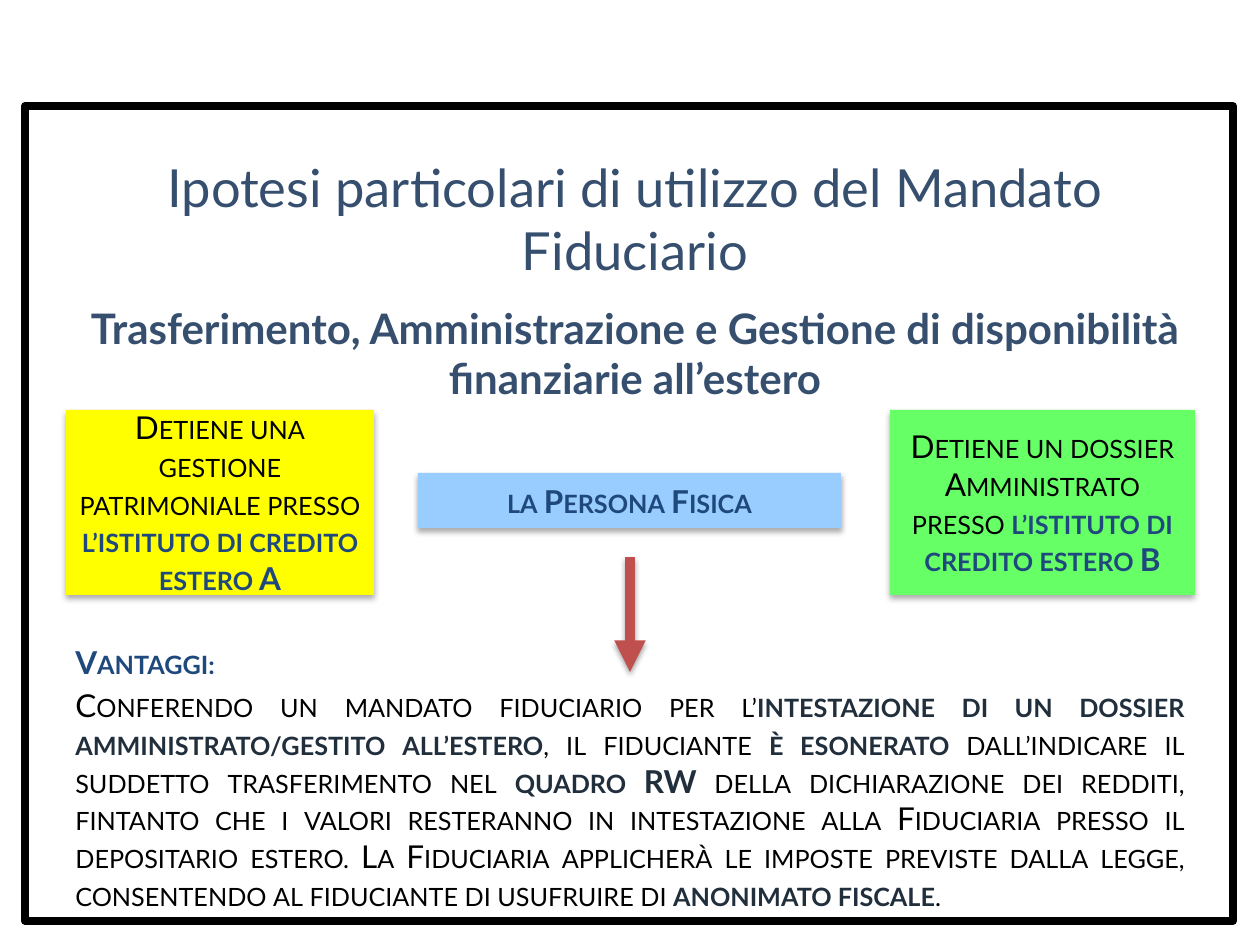
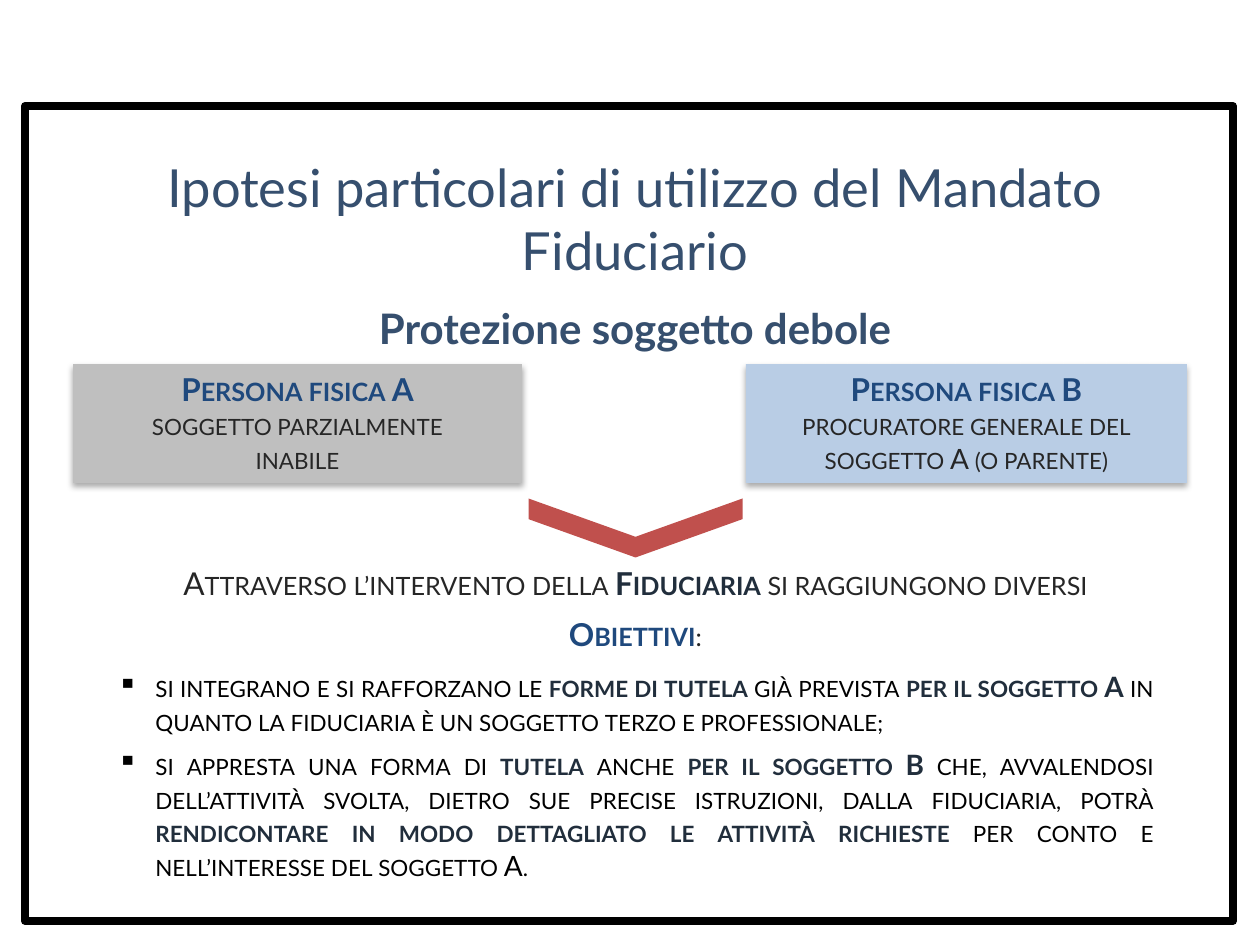
from dataclasses import dataclass

import pptx
import pptx.util
from lxml import etree
from pptx.dml.color import RGBColor
from pptx.enum.shapes import MSO_CONNECTOR, MSO_SHAPE
from pptx.enum.text import MSO_ANCHOR, MSO_AUTO_SIZE, PP_ALIGN
from pptx.oxml.ns import qn

PX = pptx.util.Inches(1) / 126
FONT = "Lato"

BLACK = RGBColor(0x00, 0x00, 0x00)
CHARCOAL = RGBColor(0x26, 0x26, 0x26)
SLATE = RGBColor(0x36, 0x4F, 0x6E)
NAVY = RGBColor(0x1F, 0x49, 0x7D)
INK = RGBColor(0x21, 0x2E, 0x3C)
RED = RGBColor(0xC0, 0x50, 0x4D)
YELLOW = RGBColor(0xFF, 0xFF, 0x00)
GREEN = RGBColor(0x66, 0xFF, 0x66)
SKY = RGBColor(0x99, 0xCC, 0xFF)
GREY = RGBColor(0xBF, 0xBF, 0xBF)
PALE_BLUE = RGBColor(0xB9, 0xCD, 0xE5)

# Run styles: colour, bold
PLAIN = (BLACK, False)
SOFT = (CHARCOAL, False)
STRONG = (INK, True)
ACCENT = (NAVY, True)

CENTER, JUSTIFY, LEFT = PP_ALIGN.CENTER, PP_ALIGN.JUSTIFY, PP_ALIGN.LEFT


@dataclass
class Line:
    """One paragraph: its runs are (text, style) pairs."""
    runs: list
    size: int = 18
    align: PP_ALIGN = CENTER
    after: float = 0
    spacing: float = 1
    bullet: bool = False
    small_caps: bool = True


FRAME = (25, 106, 1208, 815)
TITLE_AREA = (63, 149, 1144, 156)
TITLE = "Ipotesi particolari di utilizzo del Mandato Fiduciario"
BULLET_INDENT = 38

TRANSFER = {
    "subtitle": "Trasferimento, Amministrazione e Gestione di disponibilità finanziarie all’estero",
    "boxes": [
        ((890, 410, 305, 185), GREEN, MSO_ANCHOR.MIDDLE, [
            Line([("Detiene un dossier", PLAIN)]),
            Line([("Amministrato presso ", PLAIN),
                  ("l’istituto di credito estero B", ACCENT)]),
        ]),
        ((418, 473, 423, 55), SKY, MSO_ANCHOR.MIDDLE, [
            Line([("la Persona Fisica", ACCENT)]),
        ]),
        ((66, 410, 308, 185), YELLOW, MSO_ANCHOR.MIDDLE, [
            Line([("Detiene una gestione patrimoniale presso ", PLAIN),
                  ("l’istituto di credito estero A", ACCENT)]),
        ]),
    ],
    "texts": [
        ((63, 633, 1134, 238), [
            Line([("Vantaggi:", ACCENT)], align=LEFT, after=3, spacing=1.1),
            Line([
                ("Conferendo un mandato fiduciario per l’", PLAIN),
                ("intestazione di un dossier amministrato/gestito all’estero", STRONG),
                (", il fiduciante ", PLAIN),
                ("è esonerato ", STRONG),
                ("dall’indicare il suddetto trasferimento nel ", PLAIN),
                ("quadro RW ", STRONG),
                ("della dichiarazione dei redditi, fintanto che i valori resteranno in "
                 "intestazione alla Fiduciaria presso il depositario estero. La Fiduciaria "
                 "applicherà le imposte previste dalla legge, consentendo al fiduciante di "
                 "usufruire di ", PLAIN),
                ("anonimato fiscale", STRONG),
                (".", PLAIN),
            ], align=JUSTIFY),
        ]),
    ],
}

PROTECTION = {
    "subtitle": "Protezione soggetto debole",
    "boxes": [
        ((73, 364, 449, 119), GREY, MSO_ANCHOR.TOP, [
            Line([("Persona fisica A", ACCENT)]),
            Line([("soggetto parzialmente", SOFT)], size=16),
            Line([("inabile", SOFT)], size=16),
        ]),
        ((746, 364, 441, 119), PALE_BLUE, MSO_ANCHOR.TOP, [
            Line([("Persona fisica B", ACCENT)]),
            Line([("procuratore generale del soggetto A (o parente)", SOFT)], size=16),
        ]),
    ],
    "texts": [
        ((105, 609, 1061, 248), [
            Line([("Obiettivi", ACCENT), (":", SOFT)], after=9.6),
            Line([
                ("si integrano e si rafforzano le ", PLAIN),
                ("forme di tutela ", STRONG),
                ("già prevista ", PLAIN),
                ("per il soggetto A", STRONG),
                (" in quanto la fiduciaria è un soggetto terzo e professionale;", PLAIN),
            ], size=16, align=JUSTIFY, after=6, bullet=True),
            Line([
                ("si appresta una forma di ", PLAIN),
                ("tutela", STRONG),
                (" anche ", PLAIN),
                ("per il soggetto B ", STRONG),
                ("che, avvalendosi dell’attività svolta, dietro sue precise istruzioni, "
                 "dalla fiduciaria, potrà ", PLAIN),
                ("rendicontare in modo dettagliato le attività richieste ", STRONG),
                ("per conto e nell’interesse del soggetto A.", PLAIN),
            ], size=16, align=JUSTIFY, after=6, bullet=True),
        ]),
        ((147, 558, 977, 50), [
            Line([("Attraverso l’intervento della ", SOFT), ("Fiduciaria", STRONG),
                  (" si raggiungono diversi", SOFT)]),
        ]),
    ],
}

ARROW = (630, 557, 630, 672)
CHEVRON = (606, 421, 59, 214)


def emu(lengths):
    return [round(length * PX) for length in lengths]


def write(text_frame, lines, anchor=MSO_ANCHOR.TOP):
    text_frame.word_wrap = True
    text_frame.auto_size = MSO_AUTO_SIZE.NONE
    text_frame.vertical_anchor = anchor
    for index, line in enumerate(lines):
        paragraph = text_frame.add_paragraph() if index else text_frame.paragraphs[0]
        paragraph.alignment = line.align
        paragraph.line_spacing = line.spacing
        paragraph.space_before = pptx.util.Pt(0)
        paragraph.space_after = pptx.util.Pt(line.after)
        if line.bullet:
            properties = paragraph._p.get_or_add_pPr()
            indent = round(BULLET_INDENT * PX)
            properties.set("marL", str(indent))
            properties.set("indent", str(-indent))
            etree.SubElement(properties, qn("a:buChar"), char="▪")
        paragraph.font.name = FONT
        paragraph.font.size = pptx.util.Pt(line.size)
        for text, (colour, bold) in line.runs:
            run = paragraph.add_run()
            run.text = text
            run.font.color.rgb = colour
            run.font.bold = bold
            if line.small_caps:
                run._r.get_or_add_rPr().set("cap", "small")


def add_shadow(shape, blur, distance, opacity):
    """Give the shape a soft black shadow straight below it."""
    properties = shape._element.spPr
    effects = properties.find(qn("a:effectLst"))
    if effects is None:
        effects = etree.SubElement(properties, qn("a:effectLst"))
    shadow = etree.SubElement(
        effects, qn("a:outerShdw"), blurRad=str(pptx.util.Pt(blur)),
        dist=str(pptx.util.Pt(distance)), dir="5400000", rotWithShape="0")
    colour = etree.SubElement(shadow, qn("a:srgbClr"), val=str(BLACK))
    etree.SubElement(colour, qn("a:alpha"), val=str(opacity * 1000))


def add_filled(slide, kind, area, fill):
    shape = slide.shapes.add_shape(kind, *emu(area))
    shape.shadow.inherit = False
    shape.fill.solid()
    shape.fill.fore_color.rgb = fill
    shape.line.fill.background()
    return shape


def add_frame(slide):
    frame = slide.shapes.add_shape(MSO_SHAPE.RECTANGLE, *emu(FRAME))
    frame.shadow.inherit = False
    frame.fill.background()
    frame.line.color.rgb = BLACK
    frame.line.width = pptx.util.Pt(4.5)


def add_title(slide, subtitle):
    title = slide.shapes.title
    title.left, title.top, title.width, title.height = emu(TITLE_AREA)
    write(title.text_frame, [
        Line([(TITLE, (SLATE, False))], size=30, after=12, small_caps=False),
        Line([(subtitle, (SLATE, True))], size=24, after=12, small_caps=False),
    ])


def add_content_slide(presentation, content):
    slide = presentation.slides.add_slide(presentation.slide_layouts[5])
    add_frame(slide)
    add_title(slide, content["subtitle"])
    for area, fill, anchor, lines in content["boxes"]:
        box = add_filled(slide, MSO_SHAPE.RECTANGLE, area, fill)
        add_shadow(box, 3.5, 2.2, 32)
        write(box.text_frame, lines, anchor)
    for area, lines in content["texts"]:
        write(slide.shapes.add_textbox(*emu(area)).text_frame, lines)
    return slide


def add_arrow(slide):
    arrow = slide.shapes.add_connector(MSO_CONNECTOR.STRAIGHT, *emu(ARROW))
    arrow.line.color.rgb = RED
    arrow.line.width = pptx.util.Pt(6)
    etree.SubElement(arrow.line._get_or_add_ln(), qn("a:tailEnd"), type="triangle")
    add_shadow(arrow, 3.1, 1.8, 35)


def add_chevron(slide):
    chevron = add_filled(slide, MSO_SHAPE.CHEVRON, CHEVRON, RED)
    chevron.rotation = 90
    chevron.adjustments[0] = 0.65


def main():
    presentation = pptx.Presentation()
    presentation.slide_width, presentation.slide_height = emu((1260, 945))
    add_arrow(add_content_slide(presentation, TRANSFER))
    add_chevron(add_content_slide(presentation, PROTECTION))
    presentation.save("out.pptx")


if __name__ == "__main__":
    main()
